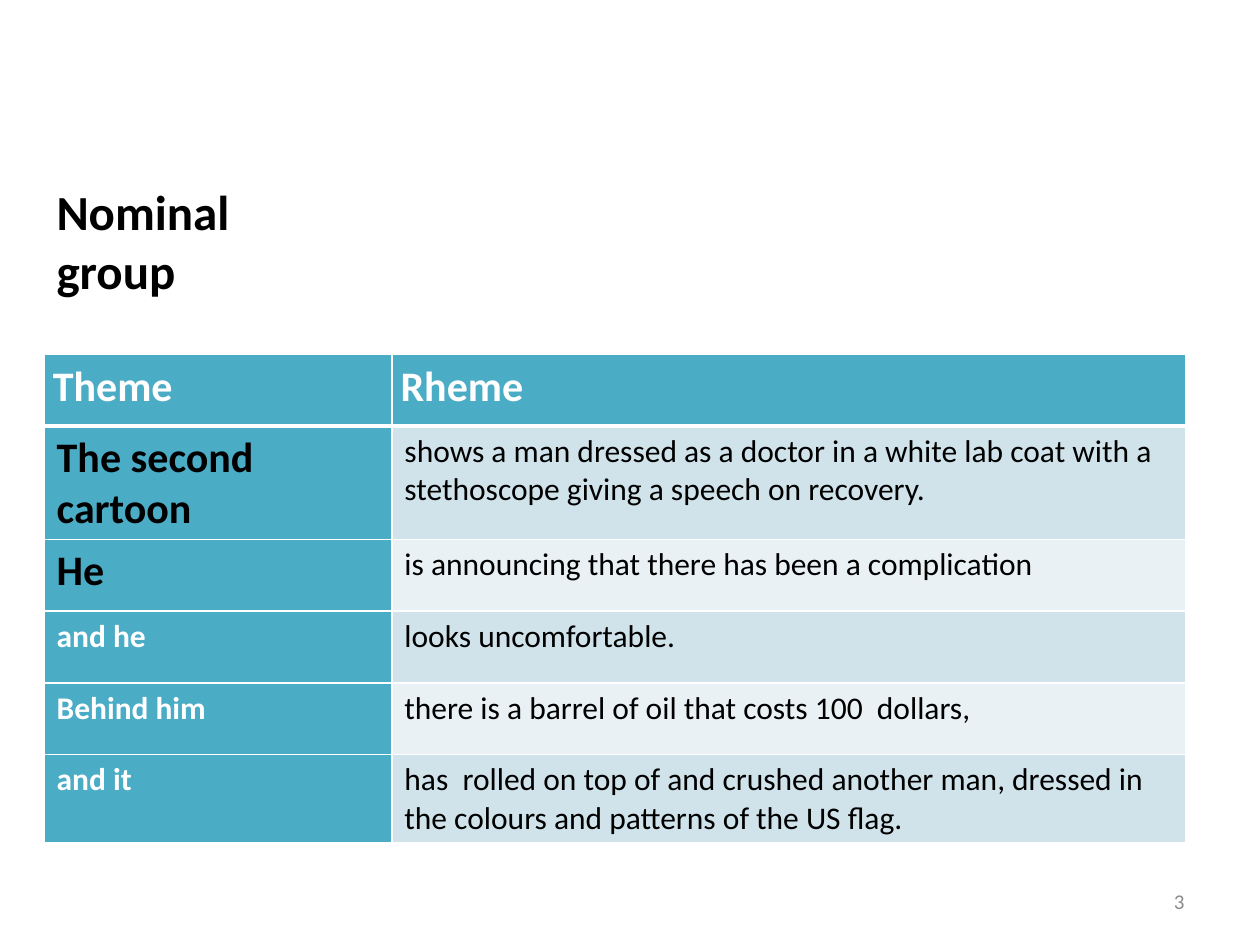
"""Build a slide that splits sentences into theme and rheme."""
from dataclasses import dataclass

from lxml.etree import SubElement
from pptx import Presentation
from pptx.dml.color import RGBColor
from pptx.enum.text import MSO_ANCHOR, PP_ALIGN
from pptx.oxml.ns import qn
from pptx.slide import Slide
from pptx.table import _Cell
from pptx.text.text import TextFrame
from pptx.util import Inches, Pt

BLACK = RGBColor(0x00, 0x00, 0x00)
WHITE = RGBColor(0xFF, 0xFF, 0xFF)
GREY = RGBColor(0x8C, 0x8C, 0x8C)
TEAL = RGBColor(0x4B, 0xAC, 0xC6)
BANDS = (RGBColor(0xD0, 0xE3, 0xEA), RGBColor(0xE9, 0xF1, 0xF5))


@dataclass(frozen=True)
class Clause:
    """A clause with its theme and rheme."""

    theme: str
    rheme: str
    nominal: bool = False


CLAUSES = (
    Clause("The second cartoon", "shows a man dressed as a doctor in a white lab coat "
           "with a stethoscope giving a speech on recovery.", nominal=True),
    Clause("He", "is announcing that there has been a complication", nominal=True),
    Clause("and he", "looks uncomfortable."),
    Clause("Behind him", "there is a barrel of oil that costs 100  dollars,"),
    Clause("and it", "has  rolled on top of and crushed another man, dressed in "
           "the colours and patterns of the US flag."),
)


def write_text(frame: TextFrame, text: str, *, size: float = 18, color: RGBColor = BLACK,
               bold: bool = False, align: PP_ALIGN = PP_ALIGN.LEFT,
               line_spacing: float = 1.0) -> None:
    """Fill a text frame with one formatted paragraph."""
    frame.word_wrap = True
    paragraph = frame.paragraphs[0]
    paragraph.alignment = align
    paragraph.line_spacing = line_spacing
    run = paragraph.add_run()
    run.text = text
    run.font.name = "Calibri"
    run.font.size = Pt(size)
    run.font.bold = bold
    run.font.color.rgb = color


def add_label(slide: Slide, left: float, top: float, width: float, height: float,
              text: str, *, anchor: MSO_ANCHOR = MSO_ANCHOR.TOP, **text_format) -> None:
    """Add a text box."""
    shape = slide.shapes.add_textbox(Inches(left), Inches(top), Inches(width), Inches(height))
    shape.text_frame.vertical_anchor = anchor
    write_text(shape.text_frame, text, **text_format)


def style_cell(cell: _Cell, fill: RGBColor, top: float = 1, bottom: float = 1) -> None:
    """Give a cell its fill and white borders."""
    properties = cell._tc.get_or_add_tcPr()
    for side, width in (("L", 1), ("R", 1), ("T", top), ("B", bottom)):
        line = SubElement(properties, qn(f"a:ln{side}"), w=str(Pt(width)))
        solid = SubElement(line, qn("a:solidFill"))
        SubElement(solid, qn("a:srgbClr"), val=str(WHITE))
    cell.fill.solid()
    cell.fill.fore_color.rgb = fill


def add_clause_table(slide: Slide) -> None:
    """Add the table of themes and rhemes."""
    row_count = len(CLAUSES) + 1
    row_height = Inches(0.57)
    table = slide.shapes.add_table(row_count, 2, Inches(0.35), Inches(2.81),
                                   Inches(9.06), row_height * row_count).table
    for column, width in zip(table.columns, (2.76, 6.3)):
        column.width = Inches(width)
    for row in table.rows:
        row.height = row_height

    for column, heading in enumerate(("Theme", "Rheme")):
        cell = table.cell(0, column)
        cell.margin_left = cell.margin_right = Inches(0.07)
        cell.margin_top = cell.margin_bottom = Inches(0)
        style_cell(cell, TEAL, bottom=3)
        write_text(cell.text_frame, heading, size=24, color=WHITE, bold=True,
                   align=PP_ALIGN.JUSTIFY, line_spacing=1.15)

    for index, clause in enumerate(CLAUSES):
        theme, rheme = table.rows[index + 1].cells
        top = 3 if index == 0 else 1
        style_cell(theme, TEAL, top=top)
        write_text(theme.text_frame, clause.theme, bold=True,
                   size=24 if clause.nominal else 18,
                   color=BLACK if clause.nominal else WHITE)
        style_cell(rheme, BANDS[index % 2], top=top)
        write_text(rheme.text_frame, clause.rheme)


def main() -> None:
    """Create and save the presentation."""
    presentation = Presentation()
    presentation.slide_width = Inches(10)
    presentation.slide_height = Inches(7.5)
    slide = presentation.slides.add_slide(presentation.slide_layouts[6])
    add_label(slide, 0.35, 1.39, 2.05, 1.04, "Nominal group", size=28, bold=True)
    add_clause_table(slide)
    add_label(slide, 7.17, 6.95, 2.33, 0.4, "3", anchor=MSO_ANCHOR.MIDDLE,
              size=12, color=GREY, align=PP_ALIGN.RIGHT)
    presentation.save("out.pptx")


if __name__ == "__main__":
    main()
